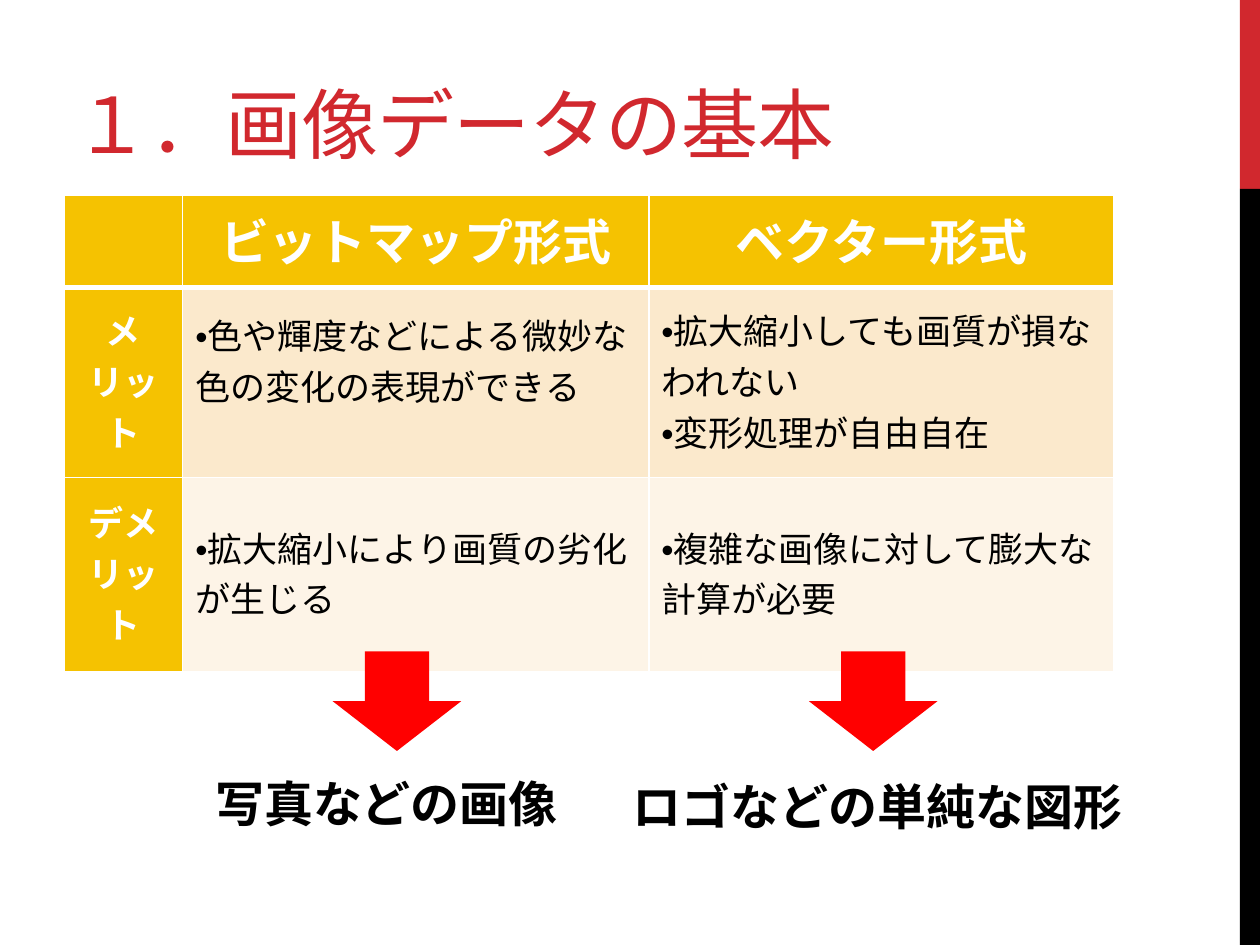
from lxml import etree
from pptx import Presentation
from pptx.dml.color import RGBColor
from pptx.enum import shapes, text
from pptx.oxml.ns import qn
from pptx.util import Inches, Pt

CRIMSON = RGBColor(0xD1, 0x28, 0x2E)
BLACK = RGBColor(0, 0, 0)
WHITE = RGBColor(255, 255, 255)
RED = RGBColor(255, 0, 0)
GOLD = RGBColor(0xF5, 0xC2, 0x01)
CREAM = RGBColor(0xFB, 0xE9, 0xCC)
IVORY = RGBColor(0xFD, 0xF4, 0xE7)

HEADING = dict(size=Pt(28), name="Arial", bold=True)
LABEL = dict(size=Pt(20), name="Arial", bold=True)
DETAIL = dict(size=Pt(20), name="Arial", bold=False)

COLUMNS = (0.94, 3.7, 3.69)
ROWS = (0.73, 1.51, 1.54)
COMPARISON = (
    ("", "ビットマップ形式", "ベクター形式"),
    ("メリット", "•色や輝度などによる微妙な色の変化の表現ができる",
     "•拡大縮小しても画質が損なわれない\n•変形処理が自由自在"),
    ("デメリット", "•拡大縮小により画質の劣化が生じる",
     "•複雑な画像に対して膨大な計算が必要"),
)


def write(frame, words, style, color, align=text.PP_ALIGN.LEFT, spacing=None):
    frame.text = words
    for para in frame.paragraphs:
        para.alignment = align
        para.line_spacing = spacing
        for span in para.runs:
            for key, value in style.items():
                setattr(span.font, key, value)
            span.font.color.rgb = color
            east = etree.SubElement(span.font._element, qn("a:ea"))
            east.set("typeface", style["name"])


def add_block(page, kind, box, color):
    block = page.shapes.add_shape(kind, *map(Inches, box))
    block.shadow.inherit = False
    block.fill.solid()
    block.fill.fore_color.rgb = color
    block.line.fill.background()


def add_side_bar(page, left, top, width, height):
    split = height / 5
    rectangle = shapes.MSO_SHAPE.RECTANGLE
    add_block(page, rectangle, (left, top, width, split), CRIMSON)
    add_block(page, rectangle, (left, top + split, width, height - split), BLACK)


def add_title(page, left, top, width, height):
    title = page.shapes.title
    place = dict(left=left, top=top, width=width, height=height)
    for key, value in place.items():
        setattr(title, key, Inches(value))
    frame = title.text_frame
    frame.vertical_anchor = text.MSO_ANCHOR.BOTTOM
    frame.auto_size = text.MSO_AUTO_SIZE.NONE
    write(frame, "１．画像データの基本", dict(size=Pt(44), name="Montserrat"), CRIMSON)
    for span in frame.paragraphs[0].runs:
        span.font._element.set("spc", "-60")


def set_borders(cell, header):
    properties = cell._tc.get_or_add_tcPr()
    for position, side in enumerate(("lnL", "lnR", "lnT", "lnB")):
        weight = 3 if header and side == "lnB" else 1
        line = etree.Element(qn(f"a:{side}"), w=str(Pt(weight)))
        fill = etree.SubElement(line, qn("a:solidFill"))
        etree.SubElement(fill, qn("a:srgbClr"), val=str(WHITE))
        properties.insert(position, line)


def add_comparison(page, left, top, width, height):
    box = map(Inches, (left, top, width, height))
    table = page.shapes.add_table(len(ROWS), len(COLUMNS), *box).table
    for column, size in zip(table.columns, COLUMNS):
        column.width = Inches(size)
    for row, size in zip(table.rows, ROWS):
        row.height = Inches(size)
    for r, entries in enumerate(COMPARISON):
        for c, words in enumerate(entries):
            cell = table.cell(r, c)
            frame = cell.text_frame
            cell.vertical_anchor = text.MSO_ANCHOR.MIDDLE
            cell.fill.solid()
            cell.fill.fore_color.rgb = GOLD if 0 in (r, c) else (CREAM, IVORY)[r - 1]
            if r == 0:
                write(frame, words, HEADING, WHITE, text.PP_ALIGN.CENTER)
                cell.margin_top = Inches(0.09)
            elif c == 0:
                write(frame, words, LABEL, WHITE, text.PP_ALIGN.CENTER, 1.3)
                cell._tc.get_or_add_tcPr().set("vert", "eaVert")
            else:
                write(frame, words, DETAIL, BLACK, spacing=1.3)
            if r:
                cell.margin_bottom = Inches(0.13)
            set_borders(cell, r == 0)
    table.cell(1, 1).margin_bottom = Inches(0.45)


def add_conclusion(page, arrow_left, box, words, align):
    add_block(page, shapes.MSO_SHAPE.DOWN_ARROW, (arrow_left, 5.17, 1.02, 0.79), RED)
    frame = page.shapes.add_textbox(*map(Inches, box)).text_frame
    frame.word_wrap = True
    write(frame, words, HEADING, BLACK, align)


def main():
    deck = Presentation()
    deck.slide_width, deck.slide_height = Inches(10), Inches(7.5)
    page = deck.slides.add_slide(deck.slide_layouts[5])
    add_side_bar(page, 9.84, 0, 0.16, 7.5)
    add_title(page, 0.48, 0.56, 6.33, 0.83)
    add_comparison(page, 0.51, 1.55, 8.33, 3.78)
    add_conclusion(page, 2.64, (1.61, 6.09, 3.46, 0.57),
                   "写真などの画像", text.PP_ALIGN.LEFT)
    add_conclusion(page, 6.42, (4.84, 6.11, 4.25, 0.57),
                   "ロゴなどの単純な図形", text.PP_ALIGN.CENTER)
    deck.save("out.pptx")


if __name__ == "__main__":
    main()
